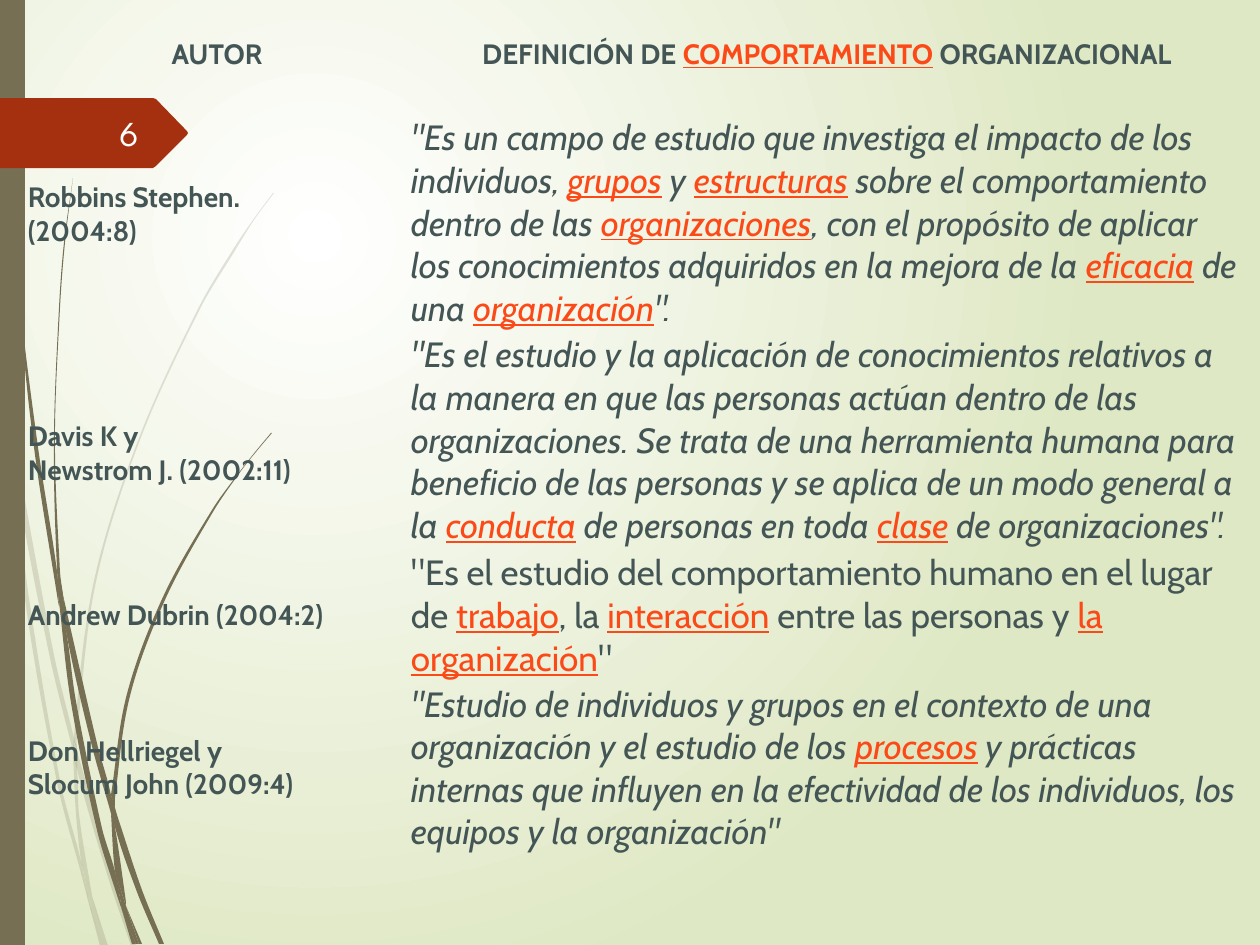
from dataclasses import dataclass

from lxml import etree
from pptx import Presentation
from pptx.dml.color import RGBColor
from pptx.enum.shapes import MSO_SHAPE
from pptx.enum.text import MSO_ANCHOR, PP_ALIGN
from pptx.oxml.ns import qn
from pptx.util import Emu, Pt

RECTANGLE = MSO_SHAPE.RECTANGLE
MIDDLE = MSO_ANCHOR.MIDDLE
LEFT, CENTER, RIGHT = PP_ALIGN.LEFT, PP_ALIGN.CENTER, PP_ALIGN.RIGHT
EMU_PER_PX = 914400 / 126
NBSP = chr(160)
PLAIN_TABLE = "{2D5ABB26-0587-4C30-8999-92F81FD0307C}"


@dataclass(frozen=True)
class Theme:
    glow: str = "FFFFFF"
    meadow: str = "DFE8C4"
    stem: str = "766F54"
    flag: str = "A53010"
    ink: str = "445555"
    link: str = "FB4A18"
    number: str = "FEFFFF"
    body_font: str = "Cabin"
    number_font: str = "League Spartan"
    label_size: int = 16
    quote_size: int = 20
    faint: int = 20


THEME = Theme()

FAINT_BLADES = [
    ([(0, 377), (9, 433), (10, 441)], [(0, 355), (8, 406), (10, 441)]),
    ([(13, 435), (15, 474), (50, 658), (74, 755)], [(13, 435), (54, 655), (74, 738)]),
    ([(77, 751), (77, 769), (107, 874), (131, 946)],
     [(77, 751), (81, 765), (111, 872), (136, 946)]),
    ([(92, 896), (105, 946)], [(92, 896), (108, 946)]),
    ([(10, 441), (24, 592), (57, 782), (81, 873), (88, 900)],
     [(10, 441), (15, 474), (28, 591), (60, 780), (81, 861), (87, 891), (88, 900)]),
    ([(73, 755), (76, 814), (81, 861), (84, 872), (92, 896)],
     [(73, 755), (77, 769), (79, 814), (91, 890), (92, 896)]),
    ([(273, 193), (253, 220), (234, 248), (199, 307), (139, 438), (94, 581), (74, 736),
      (77, 751)],
     [(274, 193), (254, 220), (236, 249), (200, 309), (140, 440), (96, 582), (77, 736),
      (77, 751)]),
    ([(88, 900), (100, 946)], [(88, 900), (103, 946)]),
    ([(74, 738), (73, 755), (77, 769)], [(74, 738), (77, 751), (77, 769)]),
    ([(82, 861), (87, 891), (88, 900), (103, 946)],
     [(82, 861), (84, 872), (92, 896), (105, 946)]),
]
SOLID_BLADES = [
    ([(3, 0), (4, 60), (6, 139), (18, 294), (34, 447), (58, 601), (59, 606)],
     [(4, 0), (5, 60), (8, 137), (19, 292), (38, 447), (57, 571), (59, 606)]),
    ([(63, 595), (67, 636), (92, 746), (111, 813)],
     [(63, 595), (97, 743), (111, 795), (111, 813)]),
    ([(115, 808), (115, 827), (137, 892), (159, 944)],
     [(115, 808), (118, 818), (142, 890), (164, 944)]),
    ([(59, 601), (71, 702), (97, 830), (116, 892), (122, 910)],
     [(59, 601), (67, 636), (76, 701), (102, 828), (115, 871), (121, 903), (122, 910)]),
    ([(73, 178), (64, 243), (59, 309), (54, 440), (57, 566), (62, 595)],
     [(73, 178), (65, 243), (60, 309), (55, 440), (60, 571), (63, 595)]),
    ([(126, 906), (139, 944)], [(126, 906), (142, 944)]),
    ([(57, 566), (59, 601), (67, 636)], [(57, 566), (63, 595), (67, 636)]),
    ([(271, 433), (256, 451), (241, 470), (212, 510), (163, 597), (127, 694), (111, 795)],
     [(272, 433), (256, 452), (241, 471), (213, 512), (165, 600), (130, 696), (115, 798),
      (115, 808)]),
    ([(122, 910), (132, 944)], [(122, 910), (136, 944)]),
    ([(111, 813), (115, 871), (121, 890), (126, 906)],
     [(111, 813), (115, 827), (126, 902), (126, 906)]),
    ([(111, 795), (111, 813), (115, 827)], [(111, 795), (115, 808), (115, 827)]),
    ([(115, 871), (121, 903), (122, 910), (136, 944)],
     [(115, 871), (121, 890), (126, 906), (139, 944)]),
]
FLAG_OUTLINE = [(0, 98), (153, 98), (156, 99), (187, 131), (188, 133), (187, 135),
                (156, 166), (153, 168), (0, 168)]

COLUMN_WIDTHS = (383, 837)
ROW_HEIGHTS = (32, 218, 219, 111, 146, 53, 63, 53)
HEADINGS = ("AUTOR", "DEFINICIÓN DE [COMPORTAMIENTO] ORGANIZACIONAL")
DEFINITIONS = [
    (("Robbins Stephen.", "(2004:8)"),
     '"Es un campo de estudio que investiga el impacto de los individuos, [grupos] y '
     "[estructuras] sobre el comportamiento dentro de las [organizaciones], con el "
     "propósito de aplicar los conocimientos adquiridos en la mejora de la [eficacia] "
     'de una [organización]".', True, (26, 44)),
    (("Davis K y", "Newstrom J. (2002:11)"),
     '"Es el estudio y la aplicación de conocimientos relativos a la manera en que las '
     "personas actúan dentro de las organizaciones. Se trata de una herramienta humana "
     "para beneficio de las personas y se aplica de un modo general a la [conducta] de "
     'personas en toda [clase] de organizaciones".', True, (26, 1)),
    (("Andrew Dubrin (2004:2)",),
     '"Es el estudio del comportamiento humano en el lugar de [trabajo], la '
     '[interacción] entre las personas y [la organización]"', False, (1, 2)),
    (("Don Hellriegel y", "Slocum John (2009:4)"),
     '"Estudio de individuos y grupos en el contexto de una organización y el estudio '
     "de los [procesos] y prácticas internas que influyen en la efectividad de los "
     'individuos, los equipos y la organización"', True, (1, 2)),
]


def px(length):
    return Emu(round(length * EMU_PER_PX))


def apply(target, values):
    for name, value in values.items():
        setattr(target, name, value)


def paint(shape, color, opacity=100):
    shape.shadow.inherit = False
    shape.fill.solid()
    shape.fill.fore_color.rgb = RGBColor.from_string(color)
    shape.line.fill.background()
    if opacity < 100:
        tint = shape.fill._xPr.find(".//" + qn("a:srgbClr"))
        etree.SubElement(tint, qn("a:alpha"), val=str(opacity * 1000))


def add_outline(slide, points, color, opacity=100):
    corners = [(px(x), px(y)) for x, y in points]
    builder = slide.shapes.build_freeform(*corners[0])
    builder.add_line_segments(corners[1:], close=True)
    outline = builder.convert_to_shape()
    paint(outline, color, opacity)
    return outline


def bezier_edge(knots):
    last = len(knots) - 1
    slopes = []
    for i in range(last + 1):
        (x0, y0), (x1, y1) = knots[max(i - 1, 0)], knots[min(i + 1, last)]
        slopes.append((x1 - x0) / (y1 - y0))
    edge = [knots[0]]
    for i in range(last):
        (x0, y0), (x1, y1) = knots[i], knots[i + 1]
        third = (y1 - y0) / 3
        edge += [(x0 + slopes[i] * third, y0 + third),
                 (x1 - slopes[i + 1] * third, y1 - third), (x1, y1)]
    return edge


def bend(lines):
    for start, middle, end in zip(lines[::3], lines[1::3], lines[2::3]):
        start.tag = qn("a:cubicBezTo")
        for line in (middle, end):
            start.append(line[0])
            line.getparent().remove(line)


def add_blade(slide, left_knots, right_knots, opacity):
    left_edge, right_edge = bezier_edge(left_knots), bezier_edge(right_knots)[::-1]
    blade = add_outline(slide, left_edge + right_edge, THEME.stem, opacity)
    lines = blade._element.findall(".//" + qn("a:lnTo"))
    bend(lines[:len(left_edge) - 1])
    bend(lines[len(left_edge):len(left_edge) + len(right_edge) - 1])


def set_background(slide):
    fill = slide.background.fill
    fill.gradient()
    for stop, color in zip(fill.gradient_stops, (THEME.glow, THEME.meadow)):
        stop.color.rgb = RGBColor.from_string(color)
    gradient = slide._element.find(".//" + qn("a:gradFill"))
    gradient.remove(gradient.find(qn("a:lin")))
    circle = etree.SubElement(gradient, qn("a:path"), path="circle")
    etree.SubElement(circle, qn("a:fillToRect"), l="50000", t="50000", r="100000", b="100000")


def write_line(paragraph, text, color, align=LEFT, **font):
    paragraph.alignment = align
    marked = text.replace(" [", NBSP + "[").replace("] ", "]" + NBSP)
    for i, part in enumerate(marked.replace("]", "[").split("[")):
        linked = i % 2 == 1
        run = paragraph.add_run()
        run.text = part
        apply(run.font, {**font, "underline": linked})
        run.font.color.rgb = RGBColor.from_string(THEME.link if linked else color)


def fill_cell(cell, lines, top=1, **style):
    apply(cell, {"vertical_anchor": MIDDLE, "margin_left": px(3), "margin_right": px(2),
                 "margin_top": px(top), "margin_bottom": px(1)})
    frame = cell.text_frame
    for i, line in enumerate(lines):
        paragraph = frame.add_paragraph() if i else frame.paragraphs[0]
        write_line(paragraph, line, THEME.ink, name=THEME.body_font, **style)


def add_definitions(slide):
    table = slide.shapes.add_table(len(ROW_HEIGHTS), len(COLUMN_WIDTHS), px(25), px(37),
                                   px(sum(COLUMN_WIDTHS)), px(sum(ROW_HEIGHTS))).table
    apply(table, {"first_row": False, "horz_banding": False})
    table._tbl.tblPr.find(qn("a:tableStyleId")).text = PLAIN_TABLE
    for column, width in zip(table.columns, COLUMN_WIDTHS):
        column.width = px(width)
    for row, height in zip(table.rows, ROW_HEIGHTS):
        row.height = px(height)
    for cell in table.iter_cells():
        cell.fill.background()
    label = {"size": Pt(THEME.label_size), "bold": True}
    for i, heading in enumerate(HEADINGS):
        fill_cell(table.cell(0, i), [heading], align=CENTER, **label)
    for row, (author, quote, italic, tops) in enumerate(DEFINITIONS, 1):
        fill_cell(table.cell(row, 0), author, top=tops[0], **label)
        fill_cell(table.cell(row, 1), [quote], top=tops[1], size=Pt(THEME.quote_size),
                  bold=False, italic=italic)


def add_page_number(slide):
    frame = slide.shapes.add_textbox(px(70), px(108), px(81), px(50)).text_frame
    apply(frame, {"word_wrap": True, "vertical_anchor": MIDDLE})
    write_line(frame.paragraphs[0], "6", THEME.number, align=RIGHT,
               name=THEME.number_font, size=Pt(THEME.quote_size))


def main():
    deck = Presentation()
    apply(deck, {"slide_width": px(1260), "slide_height": px(945)})
    slide = deck.slides.add_slide(deck.slide_layouts[6])
    set_background(slide)
    for blades, opacity in ((FAINT_BLADES, THEME.faint), (SOLID_BLADES, 100)):
        for left_knots, right_knots in blades:
            add_blade(slide, left_knots, right_knots, opacity)
    paint(slide.shapes.add_shape(RECTANGLE, 0, 0, px(25), px(945)), THEME.stem)
    add_outline(slide, FLAG_OUTLINE, THEME.flag)
    add_definitions(slide)
    add_page_number(slide)
    deck.save("out.pptx")


if __name__ == "__main__":
    main()
